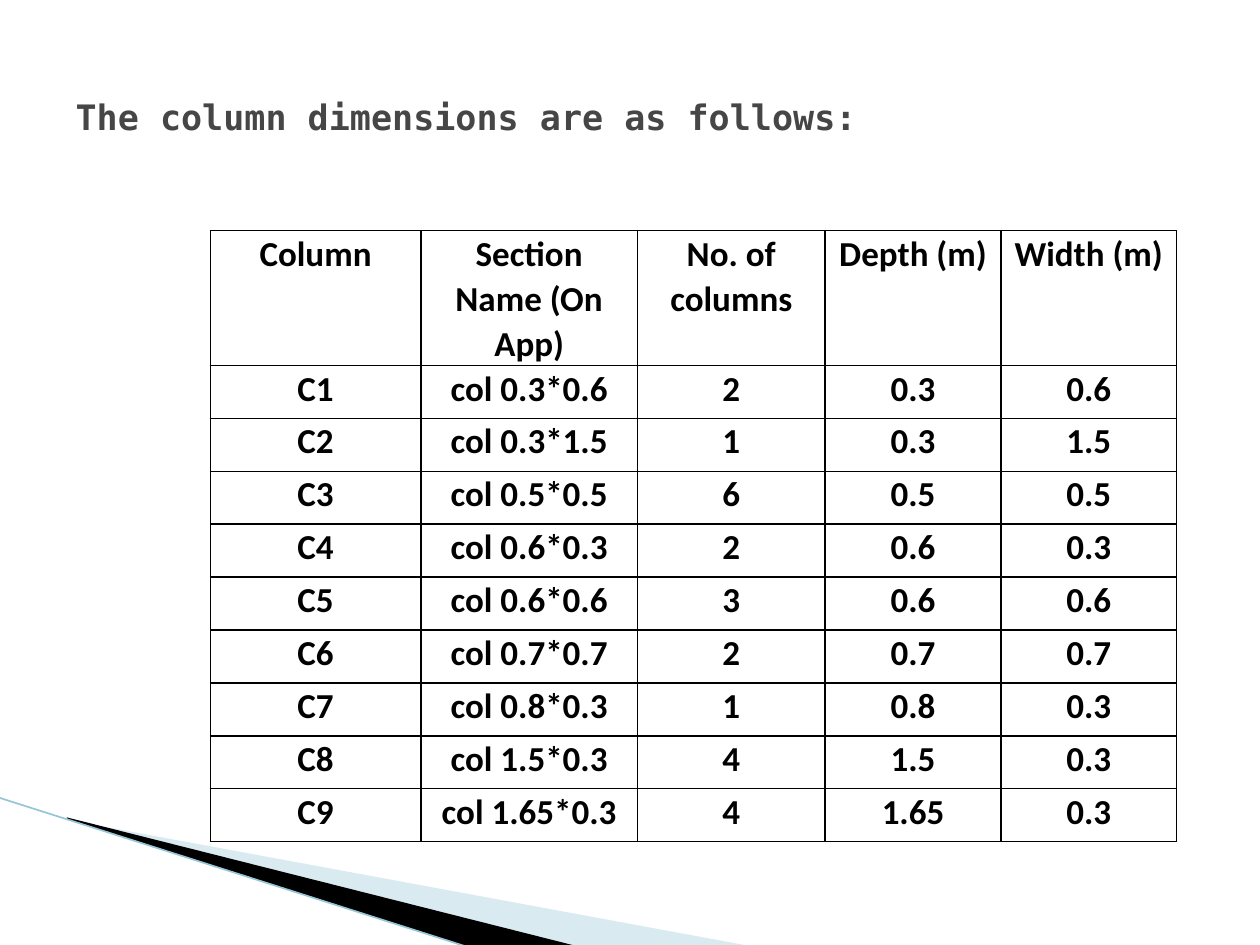
from typing import NamedTuple

from lxml.etree import SubElement
from pptx import Presentation
from pptx.dml.color import RGBColor
from pptx.enum.shapes import MSO_CONNECTOR as Conn
from pptx.enum.text import MSO_ANCHOR as Anchor, PP_ALIGN as Align
from pptx.oxml.ns import qn
from pptx.util import Emu, Inches, Pt

WIDTH, HEIGHT = Inches(10), Inches(7.5)
HEADER = ("Column", "Section Name (On App)", "No. of columns", "Depth (m)", "Width (m)")
COL_SHARES = (16.7, 17.2, 14.9, 13.95, 13.95)
HEADER_SHARE, ROW_SHARE = 14, 5.6


class Column(NamedTuple):
    """A column type: its count and its section in metres."""
    count: int
    depth: str
    width: str


class Wedge(NamedTuple):
    """A filled corner shape, its points in percent of the slide."""
    points: tuple
    color: str
    alpha: int


COLUMNS = (
    Column(2, "0.3", "0.6"),
    Column(1, "0.3", "1.5"),
    Column(6, "0.5", "0.5"),
    Column(2, "0.6", "0.3"),
    Column(3, "0.6", "0.6"),
    Column(2, "0.7", "0.7"),
    Column(1, "0.8", "0.3"),
    Column(4, "1.5", "0.3"),
    Column(4, "1.65", "0.3"),
)
WEDGES = (
    Wedge(((5.5, 86.8), (59.5, 100.1), (45.6, 100.1), (5.5, 86.7)), "A0CBDC", 40),
    Wedge(((5.3, 86.5), (45.7, 100.1), (37.2, 100.2), (5.4, 86.7)), "000000", 100),
)


def x(share: float) -> Emu:
    """Turn a percentage of the slide width into a length."""
    return Emu(round(WIDTH * share / 100))


def y(share: float) -> Emu:
    """Turn a percentage of the slide height into a length."""
    return Emu(round(HEIGHT * share / 100))


def rgb(color: str) -> RGBColor:
    """Turn a hex string into a colour."""
    return RGBColor.from_string(color)


def write(tf, text: str, *, font: str, color: str, size: float = 20,
          align=Align.LEFT, spacing: float = 1, anchor=Anchor.TOP) -> None:
    """Write one bold formatted paragraph into a text frame."""
    tf.word_wrap = True
    tf.vertical_anchor = anchor
    p = tf.paragraphs[0]
    p.alignment, p.line_spacing = align, spacing
    r = p.add_run()
    r.text = text
    r.font.name, r.font.size, r.font.bold = font, Pt(size), True
    r.font.color.rgb = rgb(color)


def draw_wedge(s, wedge: Wedge) -> None:
    """Draw one wedge without an outline."""
    start, *rest = [(x(px), y(py)) for px, py in wedge.points]
    builder = s.shapes.build_freeform(*start)
    builder.add_line_segments(rest, close=True)
    sp = builder.convert_to_shape()
    sp.shadow.inherit = False
    sp.fill.solid()
    sp.fill.fore_color.rgb = rgb(wedge.color)
    sp.line.fill.background()
    if wedge.alpha < 100:
        fill = sp._element.spPr.find(qn("a:solidFill"))
        SubElement(fill[0], qn("a:alpha"), val=str(wedge.alpha * 1000))


def draw_edge(s) -> None:
    """Draw the thin line along the lower wedge."""
    line = s.shapes.add_connector(Conn.STRAIGHT, x(-0.1), y(84.4), x(37.1), y(100.2))
    line.line.color.rgb, line.line.width = rgb("97C5D8"), Pt(0.95)
    SubElement(line._element.spPr, qn("a:effectLst"))


def set_borders(cell, color: str, width: float) -> None:
    """Give a cell a solid border on all four sides."""
    tc_pr = cell._tc.get_or_add_tcPr()
    for i, side in enumerate(("lnL", "lnR", "lnT", "lnB")):
        ln = tc_pr.makeelement(qn(f"a:{side}"), {"w": str(Pt(width))})
        fill = SubElement(ln, qn("a:solidFill"))
        SubElement(fill, qn("a:srgbClr"), val=color)
        tc_pr.insert(i, ln)


def draw_table(s, rows: list[tuple]) -> None:
    """Draw the table of column dimensions."""
    heights = [HEADER_SHARE] + [ROW_SHARE] * (len(rows) - 1)
    table = s.shapes.add_table(len(rows), len(COL_SHARES), x(16.7), y(24.4),
                               x(sum(COL_SHARES)), y(sum(heights))).table
    table.first_row = table.horz_banding = False
    for col, share in zip(table.columns, COL_SHARES):
        col.width = x(share)
    for row, share, values in zip(table.rows, heights, rows):
        row.height = y(share)
        for cell, value in zip(row.cells, values):
            cell.margin_left = cell.margin_right = Inches(0.07)
            cell.margin_top = cell.margin_bottom = 0
            cell.fill.background()
            set_borders(cell, "000000", 1)
            write(cell.text_frame, str(value), font="Calibri", color="000000",
                  align=Align.CENTER, spacing=1.05)
            cell.vertical_anchor = Anchor.TOP


def main() -> None:
    """Build the slide and save it."""
    prs = Presentation()
    prs.slide_width, prs.slide_height = WIDTH, HEIGHT
    s = prs.slides.add_slide(prs.slide_layouts[5])
    title = s.shapes.title
    title.left, title.top, title.width, title.height = x(5), y(4), x(90), y(16.67)
    write(title.text_frame, "The column dimensions are as follows:",
          font="DejaVu Sans Mono", color="464646", anchor=Anchor.MIDDLE)
    for wedge in WEDGES:
        draw_wedge(s, wedge)
    draw_edge(s)
    draw_table(s, [HEADER] + [
        (f"C{i}", f"col {c.depth}*{c.width}", c.count, c.depth, c.width)
        for i, c in enumerate(COLUMNS, 1)])
    prs.save("out.pptx")


if __name__ == "__main__":
    main()
